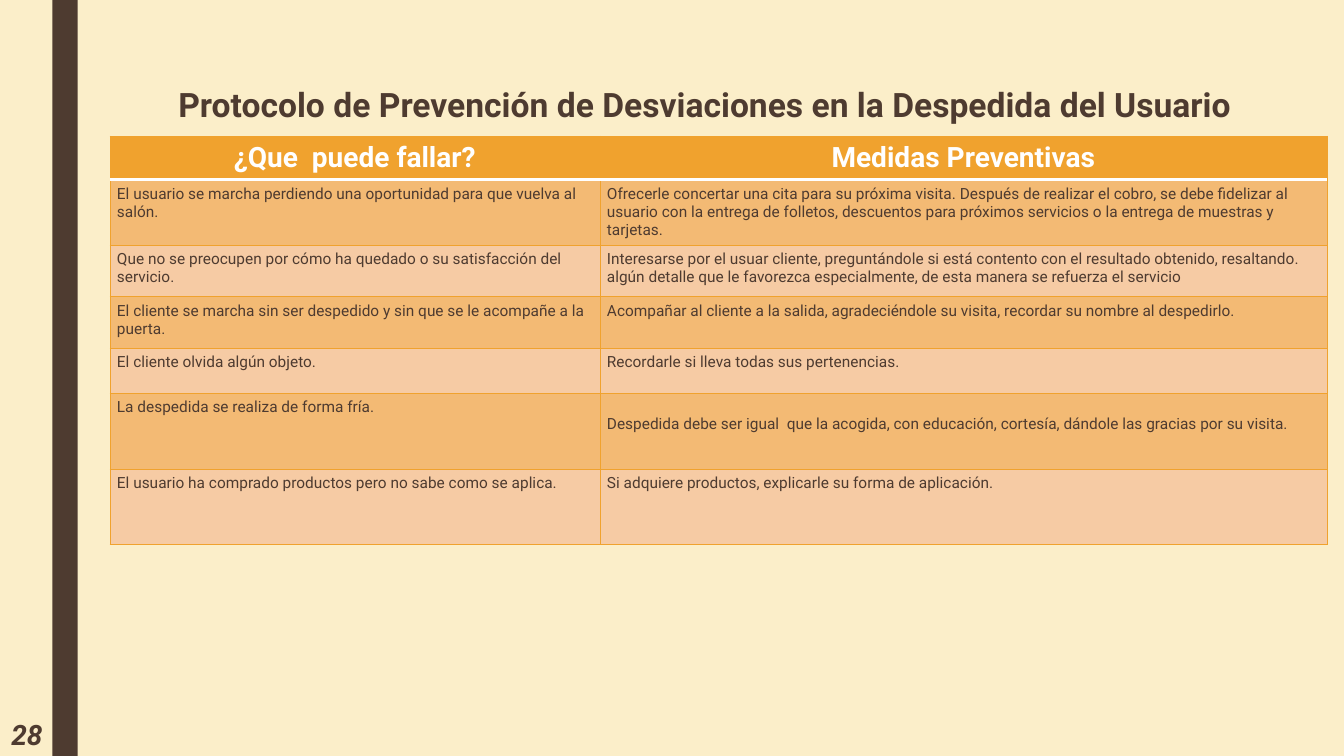
from lxml.etree import SubElement
from pptx import Presentation
from pptx.dml.color import RGBColor
from pptx.enum.shapes import MSO_SHAPE as Shape
from pptx.enum.text import MSO_ANCHOR as Anchor, PP_ALIGN as Align
from pptx.oxml.ns import qn
from pptx.util import Inches, Pt

# Content
TITLE = "Protocolo de Prevención de Desviaciones en la Despedida del Usuario"
PAGE_NUMBER = "28"
HEADINGS = ("¿Que  puede fallar?", "Medidas Preventivas")
MEASURES = [
    ("El usuario se marcha perdiendo una oportunidad para que vuelva al salón.",
     "Ofrecerle concertar una cita para su próxima visita. Después de realizar el cobro, "
     "se debe fidelizar al usuario con la entrega de folletos, descuentos para próximos "
     "servicios o la entrega de muestras y tarjetas."),
    ("Que no se preocupen por cómo ha quedado o su satisfacción del servicio.",
     "Interesarse por el usuar cliente, preguntándole si está contento con el resultado "
     "obtenido, resaltando. algún detalle que le favorezca especialmente, de esta manera "
     "se refuerza el servicio"),
    ("El cliente se marcha sin ser despedido y sin que se le acompañe a la puerta.",
     "Acompañar al cliente a la salida, agradeciéndole su visita, recordar su nombre al "
     "despedirlo."),
    ("El cliente olvida algún objeto.",
     "Recordarle si lleva todas sus pertenencias."),
    ("La despedida se realiza de forma fría.",
     "Despedida debe ser igual  que la acogida, con educación, cortesía, dándole las "
     "gracias por su visita."),
    ("El usuario ha comprado productos pero no sabe como se aplica.",
     "Si adquiere productos, explicarle su forma de aplicación."),
]
COLUMN_WIDTHS = (4.86, 7.21)
ROW_HEIGHTS = (0.43, 0.51, 0.51, 0.51, 0.45, 0.75, 0.75)
LOWERED_CELL = (5, 1)  # this answer starts one line lower

FONT = "Roboto"
CREAM = RGBColor(0xFB, 0xEE, 0xC9)
BROWN = RGBColor(0x4E, 0x3B, 0x30)
ORANGE = RGBColor(0xF0, 0xA2, 0x2E)
AMBER = RGBColor(0xF3, 0xBA, 0x74)
PEACH = RGBColor(0xF6, 0xCB, 0xA4)
WHITE = RGBColor(0xFF, 0xFF, 0xFF)


def style(paragraph, size, color, bold=False, italic=False, align=Align.LEFT):
    paragraph.alignment = align
    font = paragraph.font
    font.name, font.size, font.bold, font.italic = FONT, Pt(size), bold, italic
    font.color.rgb = color


def add_label(slide, text, box, anchor):
    label = slide.shapes.add_textbox(*map(Inches, box)).text_frame
    label.word_wrap = True
    label.vertical_anchor = anchor
    label.text = text
    return label.paragraphs[0]


def add_border(cell, side, color, width):
    line = SubElement(cell._tc.get_or_add_tcPr(), qn("a:ln" + side), w=str(Pt(width)))
    fill = SubElement(line, qn("a:solidFill"))
    SubElement(fill, qn("a:srgbClr"), val=str(color))


def fill_cell(cell, text, row, column):
    heading = row == 0
    cell.text = text
    cell.margin_left = cell.margin_right = Inches(0.1 if heading else 0.07)
    cell.margin_top = Inches(0.22 if (row, column) == LOWERED_CELL else 0.05)
    cell.margin_bottom = Inches(0.05)
    # White rule between the heading row and the body
    white_side = {0: "B", 1: "T"}.get(row)
    for side in "LRTB":
        if side == white_side:
            add_border(cell, side, WHITE, 2.75)
        else:
            add_border(cell, side, ORANGE, 0.5)
    cell.fill.solid()
    cell.fill.fore_color.rgb = ORANGE if heading else AMBER if row % 2 else PEACH
    if heading:
        style(cell.text_frame.paragraphs[0], 20, WHITE, bold=True, align=Align.CENTER)
    else:
        style(cell.text_frame.paragraphs[0], 11, BROWN)


def main():
    deck = Presentation()
    deck.slide_width, deck.slide_height = Inches(13.33), Inches(7.5)
    slide = deck.slides.add_slide(deck.slide_layouts[6])
    slide.background.fill.solid()
    slide.background.fill.fore_color.rgb = CREAM

    # Side band
    band = slide.shapes.add_shape(Shape.RECTANGLE, *map(Inches, (0.52, 0, 0.25, 7.5)))
    band.shadow.inherit = False
    band.fill.solid()
    band.fill.fore_color.rgb = BROWN
    band.line.fill.background()

    # Title
    title = add_label(slide, TITLE, (1.67, 0.58, 10.92, 0.8), Anchor.TOP)
    title.line_spacing = 1.5
    style(title, 24, BROWN, bold=True)

    # Table of failures and measures
    rows = [HEADINGS, *MEASURES]
    box = (1.09, 1.35, sum(COLUMN_WIDTHS), sum(ROW_HEIGHTS))
    table = slide.shapes.add_table(len(rows), len(HEADINGS), *map(Inches, box)).table
    for column, width in zip(table.columns, COLUMN_WIDTHS):
        column.width = Inches(width)
    for r, (texts, height) in enumerate(zip(rows, ROW_HEIGHTS)):
        table.rows[r].height = Inches(height)
        for c, text in enumerate(texts):
            fill_cell(table.cell(r, c), text, r, c)

    # Page number
    number = add_label(slide, PAGE_NUMBER, (-0.07, 7.06, 0.59, 0.44), Anchor.MIDDLE)
    style(number, 20, BROWN, bold=True, italic=True, align=Align.RIGHT)

    deck.save("out.pptx")


if __name__ == "__main__":
    main()
